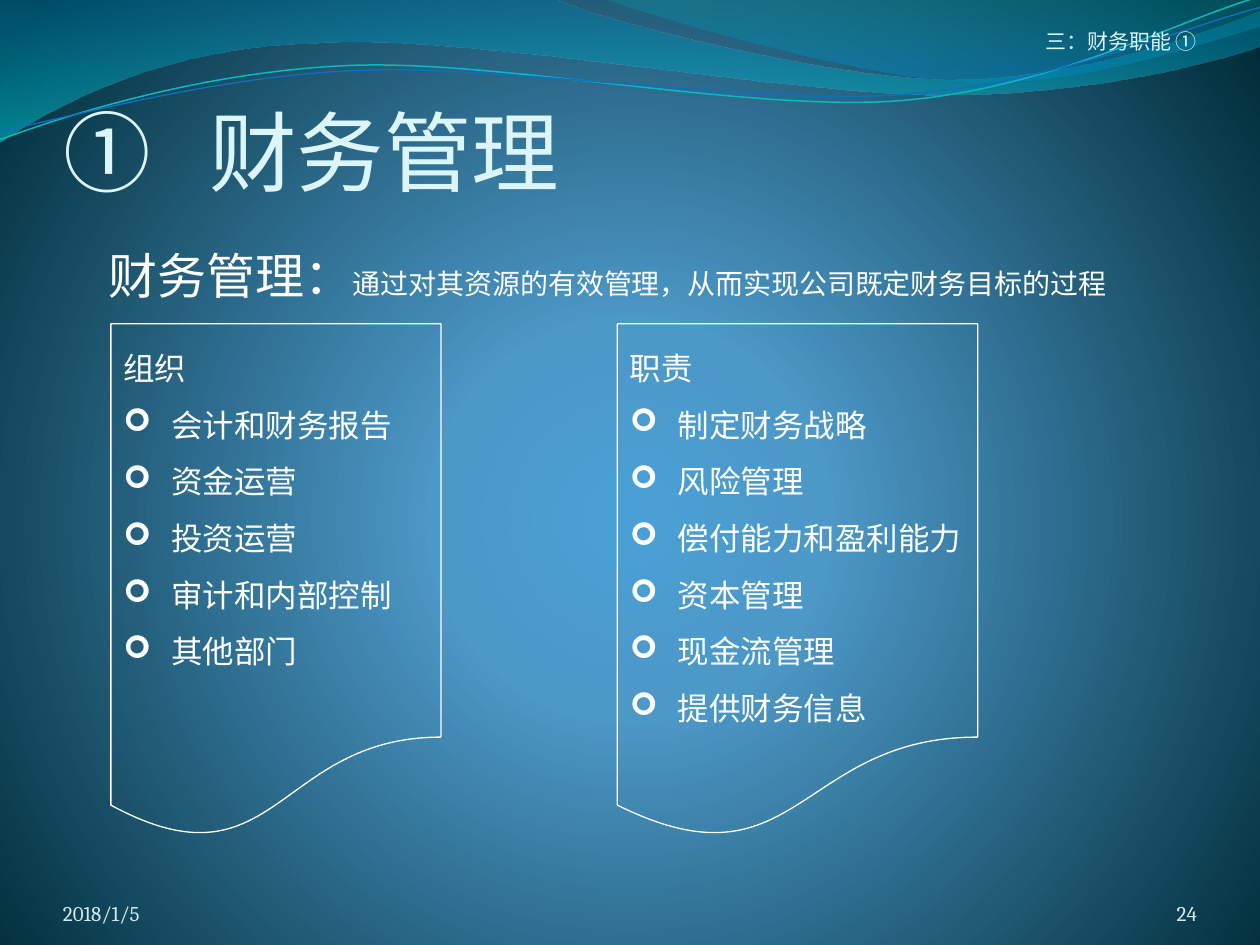
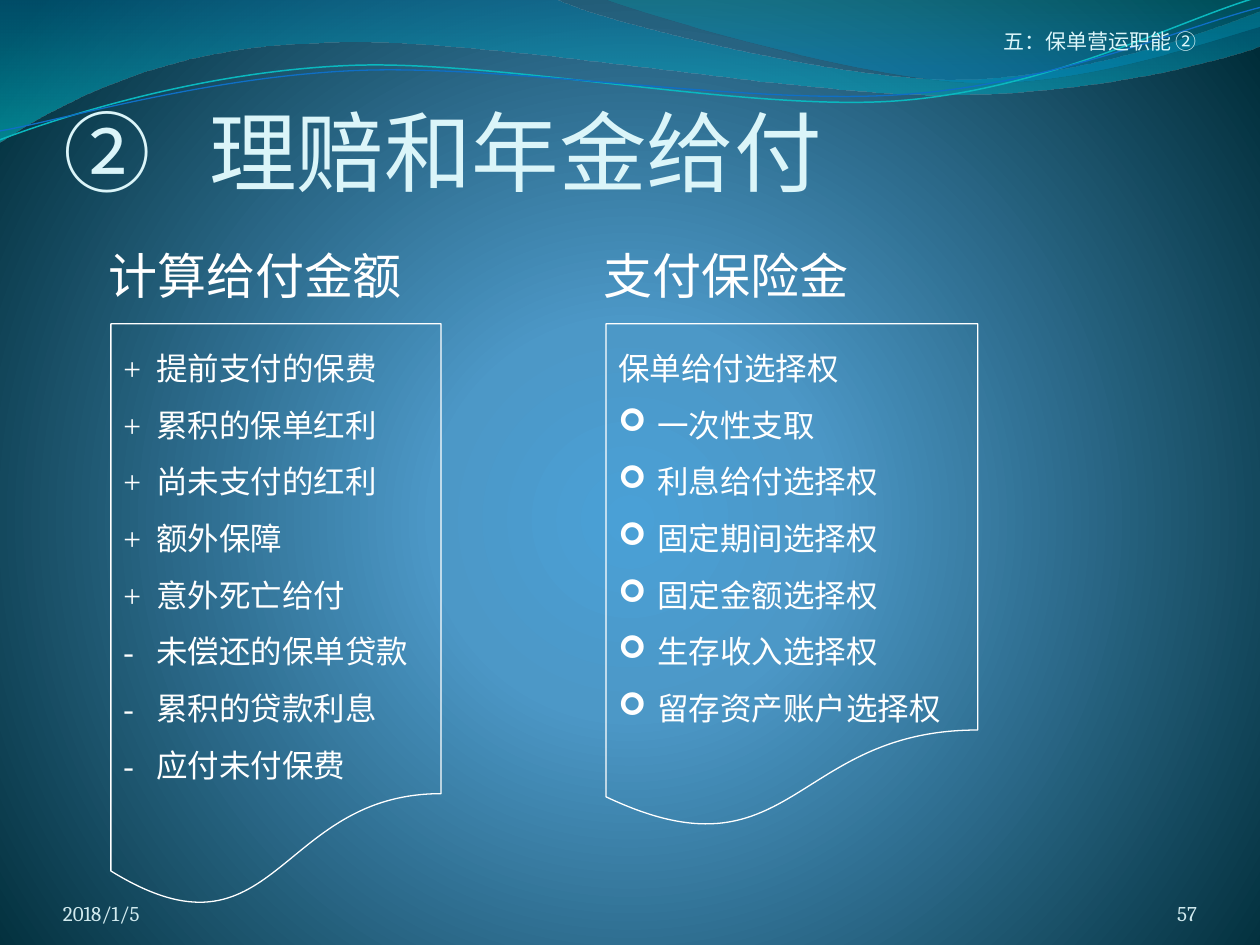
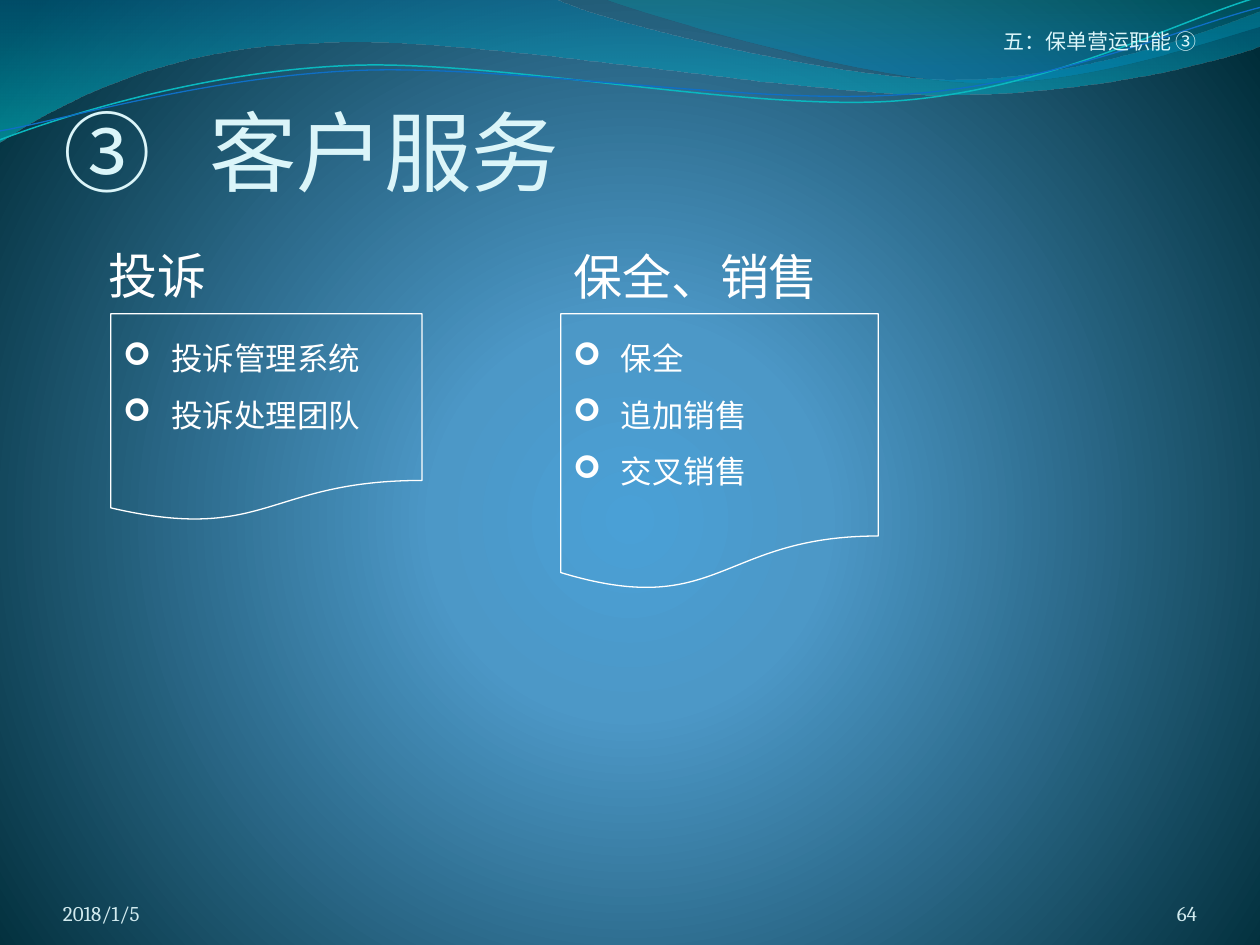
from math import cos, radians, sin

from pptx import Presentation
from pptx.dml.color import RGBColor
from pptx.enum.shapes import MSO_SHAPE as SHAPE
from pptx.enum.text import MSO_ANCHOR as ANCHOR, MSO_AUTO_SIZE as AUTO, PP_ALIGN as ALIGN
from pptx.oxml import parse_xml
from pptx.oxml.ns import nsdecls, qn
from pptx.util import Inches, Pt

WHITE = RGBColor(0xFF, 0xFF, 0xFF)
TITLE_TINT = RGBColor(0xDB, 0xF5, 0xF9)
FOOTER_TINT = RGBColor(0xD1, 0xEA, 0xEE)
BG_CENTRE = RGBColor(0x4A, 0xA0, 0xD6)
BG_MIDDLE = RGBColor(0x4C, 0x98, 0xC7)
BG_EDGE = RGBColor(0x00, 0x2C, 0x38)
WAVE_BLUE = RGBColor(0x00, 0x74, 0xA1)
WAVE_CYAN = RGBColor(0x00, 0xC6, 0xCF)
CREST_TEAL = RGBColor(0x00, 0xA1, 0xA9)
CREST_BLUE = RGBColor(0x00, 0x8B, 0xBF)
LINE_TEAL = RGBColor(0x0A, 0xB8, 0xBF)
LINE_BLUE = RGBColor(0x0F, 0x6F, 0xC6)

TITLE_FONT, BODY_FONT, CARD_FONT = "Calibri", "Cambria", "Times New Roman"
DATE = "2018/1/5"
ARROW = "➢"
TITLE_AND_CONTENT, TWO_CONTENT = 1, 3
CURVE_TILT = 357.3

# Gradient shading: straight down, or round about the centre
DOWN = '<a:lin ang="5400000" scaled="1"/>'
ROUND = ('<a:path path="circle">'
         '<a:fillToRect l="10000" t="110000" r="10000" b="100000"/></a:path>')

# Wave outlines: a start, then lines (one point) and curves (three points)
BAND = [[(0, 0)], [(4.4, -0.01)],
        [(4.76, 0.17), (6.64, 0.63), (7.58, 0.63)],
        [(8.53, 0.63), (9.58, 0.26), (10, 0.09)],
        [(10.01, 0.36)],
        [(9.83, 0.44), (8.7, 0.76), (7.46, 0.75)],
        [(6.22, 0.75), (3.82, 0.28), (2.57, 0.34)],
        [(1.29, 0.36), (0.46, 0.83), (-0.01, 1.13)]]
CREST = [[(4.79, -0.01)],
         [(5.09, 0.11), (6.82, 0.62), (7.69, 0.65)],
         [(8.56, 0.69), (9.61, 0.32), (10, 0.21)],
         [(10, 0)]]
TEAL_CURVE = [[(0, 1.11)],
              [(0.48, 0.93), (1.58, 0.57), (2.77, 0.52)],
              [(3.95, 0.47), (5.93, 0.89), (7.13, 0.8)],
              [(8.33, 0.71), (9.38, 0.15), (9.98, -0.02)]]
BLUE_CURVE = [[(0, 1.04)],
              [(0.47, 0.96), (1.64, 0.61), (2.83, 0.56)],
              [(4.03, 0.51), (5.97, 0.84), (7.17, 0.75)],
              [(8.36, 0.67), (9.41, 0.21), (10, 0.06)]]


def gradient(stops, shading):
    """Gradient fill from (position %, colour, opacity %) stops."""
    def mark(pos, color, alpha):
        opacity = f'<a:alpha val="{alpha * 1000}"/>' if alpha < 100 else ""
        return (f'<a:gs pos="{pos * 1000}"><a:srgbClr val="{color}">'
                f'{opacity}</a:srgbClr></a:gs>')
    marks = "".join(mark(*stop) for stop in stops)
    return parse_xml(f'<a:gradFill {nsdecls("a")} rotWithShape="1">'
                     f'<a:gsLst>{marks}</a:gsLst>{shading}</a:gradFill>')


def turn_back(outline, degrees):
    """Outline turned against its rotation, about the middle of its ends."""
    (x0, y0), (x1, y1) = outline[0][-1], outline[-1][-1]
    cx, cy = (x0 + x1) / 2, (y0 + y1) / 2
    c, k = cos(radians(degrees)), sin(radians(degrees))
    return [[(cx + (x - cx) * c + (y - cy) * k, cy - (x - cx) * k + (y - cy) * c)
             for x, y in segment] for segment in outline]


def add_outline(s, outline, closed):
    """Freeform through the segment ends, with Bezier curves between them."""
    points = [[(Inches(x), Inches(y)) for x, y in segment] for segment in outline]
    builder = s.shapes.build_freeform(*points[0][0])
    builder.add_line_segments([segment[-1] for segment in points[1:]], close=closed)
    sp = builder.convert_to_shape()
    sp.shadow.inherit = False
    sp.fill.background()
    lines = list(sp.element.iter(qn("a:lnTo")))
    for line, segment in zip(lines, points[1:]):
        if len(segment) == 3:
            marks = "".join(f'<a:pt x="{x - sp.left}" y="{y - sp.top}"/>' for x, y in segment)
            curve = parse_xml(f'<a:cubicBezTo {nsdecls("a")}>{marks}</a:cubicBezTo>')
            line.getparent().replace(line, curve)
    return sp


def add_wave(s, outline, stops):
    sp = add_outline(s, outline, closed=True)
    sp.line.fill.background()
    props = sp.element.spPr
    props.replace(props.find(qn("a:noFill")), gradient(stops, DOWN))
    return sp


def add_curve(s, outline, color, width):
    sp = add_outline(s, turn_back(outline, CURVE_TILT), closed=False)
    sp.rotation = CURVE_TILT
    sp.line.color.rgb = color
    sp.line.width = Pt(width)
    return sp


def dress_master(prs, s):
    """Give the master its background and waves, drawn on s and moved over."""
    master = prs.slide_master
    master.background.fill.solid()
    bg = master.element.find(".//" + qn("p:bgPr"))
    bg.replace(bg[0], gradient([(0, BG_CENTRE, 100), (25, BG_MIDDLE, 100),
                                (100, BG_EDGE, 100)], ROUND))
    waves = [add_wave(s, BAND, [(0, WAVE_BLUE, 45), (100, WAVE_CYAN, 55)]),
             add_wave(s, CREST, [(0, CREST_TEAL, 30), (80, CREST_BLUE, 45)]),
             add_curve(s, TEAL_CURVE, LINE_TEAL, 0.85),
             add_curve(s, BLUE_CURVE, LINE_BLUE, 0.75)]
    for position, wave in enumerate(waves, start=2):
        master.shapes.element.insert(position, wave.element)


def place(sp, box):
    sp.left, sp.top, sp.width, sp.height = map(Inches, box)


def set_font(p, name, size, color):
    p.font.name, p.font.size, p.font.color.rgb = name, Pt(size), color


def set_indent(p, hang, bullet=None):
    """Hanging indent in inches, with a bullet character or none."""
    props = p._p.get_or_add_pPr()
    props.set("marL", str(Inches(hang)))
    props.set("indent", str(-Inches(hang)))
    tags = (['buFont {} typeface="Wingdings"', f'buChar {{}} char="{bullet}"']
            if bullet else ["buNone {}"])
    for tag in tags:
        mark = parse_xml(f'<a:{tag.format(nsdecls("a"))}/>')
        props.insert_element_before(mark, "a:tabLst", "a:defRPr", "a:extLst")


def set_frame(tf, top_inset):
    """Bottom-anchored frame without side insets."""
    tf.word_wrap = True
    tf.auto_size = AUTO.NONE
    tf.vertical_anchor = ANCHOR.BOTTOM
    tf.margin_left = tf.margin_right = tf.margin_bottom = 0
    tf.margin_top = Inches(top_inset)


def add_label(s, box, text, font, size, color, align=ALIGN.LEFT, top_inset=0):
    tf = s.shapes.add_textbox(*map(Inches, box)).text_frame
    set_frame(tf, top_inset)
    p = tf.paragraphs[0]
    p.text, p.alignment = text, align
    set_font(p, font, size, color)


def add_title(s, number, text):
    sp = s.shapes.title
    place(sp, (0.5, 0.6, 8.01, 1.01))
    set_frame(sp.text_frame, 0.05)
    p = sp.text_frame.paragraphs[0]
    p.text, p.alignment = f"{number}\t{text}", ALIGN.LEFT
    set_indent(p, 1.16)
    set_font(p, TITLE_FONT, 50, TITLE_TINT)


def add_heading(sp, box, text, detail=""):
    """Column heading, with an optional smaller explanation after it."""
    place(sp, box)
    tf = sp.text_frame
    tf.word_wrap = True
    tf.auto_size = AUTO.NONE
    p = tf.paragraphs[0]
    p.text, p.line_spacing = text, 1.6
    set_indent(p, 0)
    set_font(p, BODY_FONT, 28, WHITE)
    if detail:
        r = p.add_run()
        r.text, r.font.size = detail, Pt(16)


def add_card(s, box, items, lead="", hang=0.38, bullet=ARROW):
    """Document outline with an optional lead line above a list."""
    sp = s.shapes.add_shape(SHAPE.FLOWCHART_DOCUMENT, *map(Inches, box))
    sp.shadow.inherit = False
    sp.fill.background()
    sp.line.color.rgb = WHITE
    sp.line.width = Pt(0.75)
    tf = sp.text_frame
    tf.word_wrap = True
    tf.vertical_anchor = ANCHOR.TOP
    lines = [lead, *items] if lead else items
    for i, text in enumerate(lines):
        p = tf.add_paragraph() if i else tf.paragraphs[0]
        p.text, p.alignment, p.line_spacing = text, ALIGN.LEFT, 1.5
        set_font(p, CARD_FONT, 18, WHITE)
        if text != lead:
            set_indent(p, hang, bullet)


def add_slide(prs, layout, section, section_width, number, title, page):
    """Slide with its section label, title, date and page number."""
    s = prs.slides.add_slide(prs.slide_layouts[layout])
    add_label(s, (0.5, 6.95, 2.33, 0.4), DATE, BODY_FONT, 12, FOOTER_TINT)
    add_label(s, (8.67, 6.95, 0.83, 0.4), str(page), BODY_FONT, 12, FOOTER_TINT, ALIGN.RIGHT)
    add_label(s, (9.5 - section_width, 0, section_width, 0.43), f"{section} {number}",
              TITLE_FONT, 12, TITLE_TINT, ALIGN.RIGHT, top_inset=0.05)
    add_title(s, number, title)
    return s


def finance_slide(prs):
    s = add_slide(prs, TITLE_AND_CONTENT, "三：财务职能", 1.98, "①", "财务管理", 24)
    add_heading(s.placeholders[1], (0.76, 1.62, 8.5, 0.86), "财务管理：",
                "通过对其资源的有效管理，从而实现公司既定财务目标的过程")
    add_card(s, (0.88, 2.57, 2.62, 4.09),
             ["会计和财务报告", "资金运营", "投资运营", "审计和内部控制", "其他部门"],
             lead="组织")
    add_card(s, (4.9, 2.57, 2.86, 4.09),
             ["制定财务战略", "风险管理", "偿付能力和盈利能力", "资本管理",
              "现金流管理", "提供财务信息"], lead="职责")
    return s


def claims_slide(prs):
    s = add_slide(prs, TWO_CONTENT, "五：保单营运职能", 3.24, "②", "理赔和年金给付", 57)
    add_heading(s.placeholders[1], (0.76, 1.62, 2.98, 0.86), "计算给付金额")
    additions = ["提前支付的保费", "累积的保单红利", "尚未支付的红利", "额外保障", "意外死亡给付"]
    deductions = ["未偿还的保单贷款", "累积的贷款利息", "应付未付保费"]
    signed = [f"+\t{item}" for item in additions] + [f"-\t{item}" for item in deductions]
    add_card(s, (0.88, 2.57, 2.62, 4.65), signed, hang=0.26, bullet=None)
    add_heading(s.placeholders[2], (4.69, 1.62, 2.98, 0.86), "支付保险金")
    add_card(s, (4.81, 2.57, 2.95, 4.02),
             ["一次性支取", "利息给付选择权", "固定期间选择权", "固定金额选择权",
              "生存收入选择权", "留存资产账户选择权"], lead="保单给付选择权", hang=0.31)


def service_slide(prs):
    s = add_slide(prs, TWO_CONTENT, "五：保单营运职能", 3.24, "③", "客户服务", 64)
    add_card(s, (0.88, 2.49, 2.47, 1.65), ["投诉管理系统", "投诉处理团队"])
    add_card(s, (4.45, 2.49, 2.52, 2.2), ["保全", "追加销售", "交叉销售"])
    add_heading(s.placeholders[1], (0.76, 1.62, 2.43, 0.86), "投诉")
    add_heading(s.placeholders[2], (4.45, 1.63, 2.43, 0.86), "保全、销售")


def main():
    prs = Presentation()
    prs.slide_width, prs.slide_height = Inches(10), Inches(7.5)
    first = finance_slide(prs)
    claims_slide(prs)
    service_slide(prs)
    dress_master(prs, first)
    prs.save("out.pptx")


if __name__ == "__main__":
    main()
